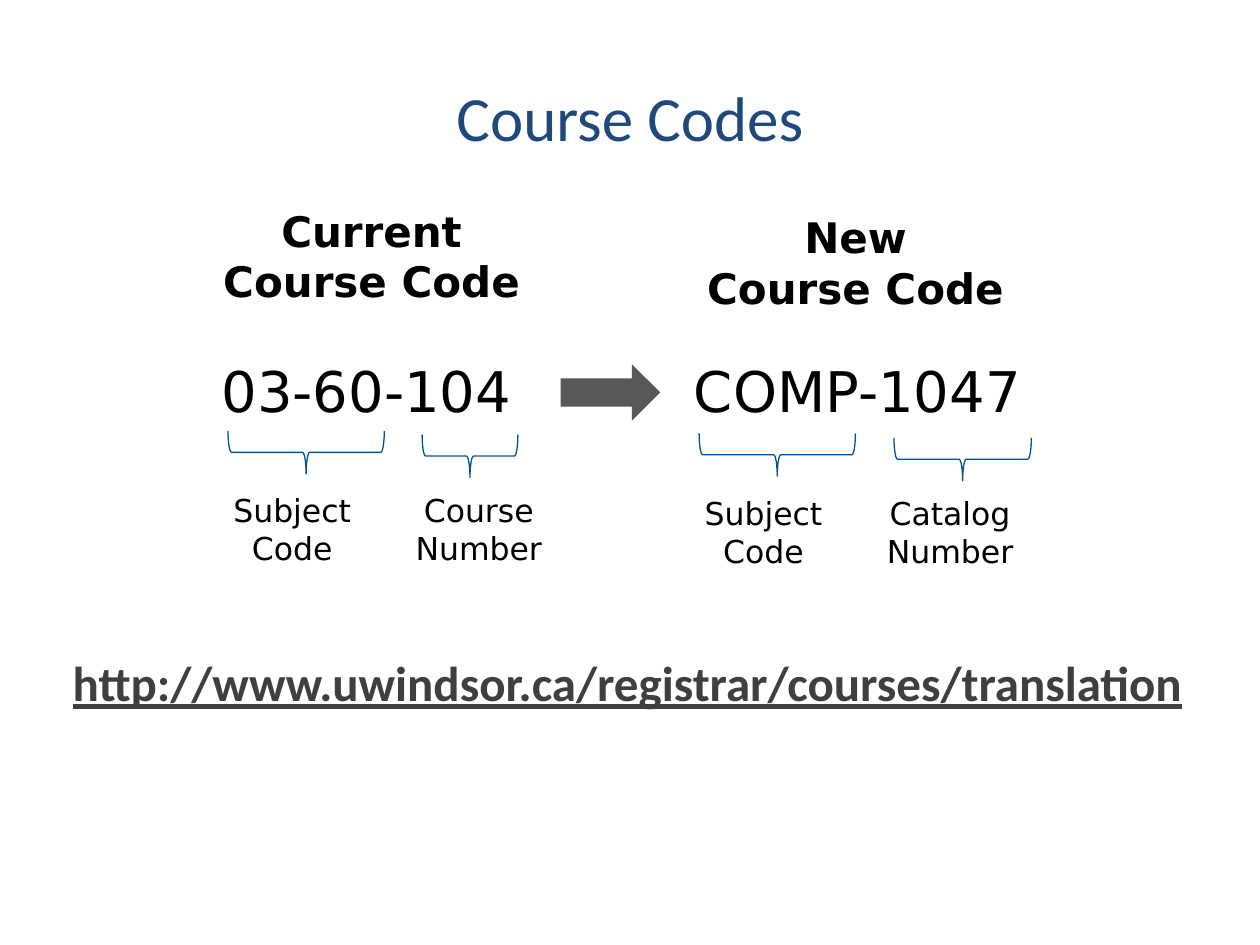
from dataclasses import dataclass

from pptx import Presentation
from pptx.dml.color import RGBColor
from pptx.enum.shapes import MSO_SHAPE
from pptx.enum.text import MSO_ANCHOR, PP_ALIGN
from pptx.util import Pt

BRACE_DEPTH = 24.5
HEADING_SIZE = (184.3, 65.5)
LABEL_SIZE = (93.6, 51.1)


@dataclass
class Label:
    text: str
    left: float
    top: float
    width: float
    height: float
    size: float
    font: str = "DejaVu Sans"
    color: str = "000000"
    align: PP_ALIGN = PP_ALIGN.CENTER
    anchor: MSO_ANCHOR = MSO_ANCHOR.TOP
    bold: bool = False
    underline: bool = False
    wrap: bool = True
    margin_left: float = 7.2


@dataclass
class Brace:
    center_x: float
    center_y: float
    span: float


def rgb(value: str) -> RGBColor:
    return RGBColor.from_string(value)


def draw_label(slide, label: Label) -> None:
    s = slide.shapes.add_textbox(
        Pt(label.left), Pt(label.top), Pt(label.width), Pt(label.height))
    tf = s.text_frame
    tf.word_wrap = label.wrap
    tf.vertical_anchor = label.anchor
    tf.margin_left = Pt(label.margin_left)
    tf.text = label.text
    for p in tf.paragraphs:
        p.alignment = label.align
        for r in p.runs:
            r.font.name = label.font
            r.font.size = Pt(label.size)
            r.font.bold = label.bold
            r.font.underline = label.underline
            r.font.color.rgb = rgb(label.color)


def draw_brace(slide, brace: Brace) -> None:
    s = slide.shapes.add_shape(
        MSO_SHAPE.LEFT_BRACE,
        Pt(brace.center_x - BRACE_DEPTH / 2), Pt(brace.center_y - brace.span / 2),
        Pt(BRACE_DEPTH), Pt(brace.span))
    s.rotation = 270
    s.shadow.inherit = False
    s.fill.background()
    s.line.color.rgb = rgb("005393")
    s.line.width = Pt(0.75)


def draw_arrow(slide, left: float, top: float, width: float, height: float) -> None:
    s = slide.shapes.add_shape(
        MSO_SHAPE.RIGHT_ARROW, Pt(left), Pt(top), Pt(width), Pt(height))
    s.shadow.inherit = False
    s.fill.solid()
    s.fill.fore_color.rgb = rgb("58585B")
    s.line.fill.background()


LABELS = [
    Label("Course Codes", 36, 21.6, 648, 90, 36, font="Calibri",
          color="1F497D", anchor=MSO_ANCHOR.MIDDLE),
    Label("http://www.uwindsor.ca/registrar/courses/translation",
          28.1, 369.4, 671.8, 41, 28, font="Calibri", color="3F3F3F",
          align=PP_ALIGN.LEFT, bold=True, underline=True, margin_left=13.5),
    Label("Current\nCourse Code", 120.2, 113.8, *HEADING_SIZE, 24,
          bold=True, wrap=False),
    Label("New\nCourse Code", 396.7, 117.4, *HEADING_SIZE, 24,
          bold=True, wrap=False),
    Label("03-60-104", 119.5, 200.2, 187.9, 46.1, 32, align=PP_ALIGN.LEFT),
    Label("COMP-1047", 389.5, 200.2, 205.9, 46.1, 32, align=PP_ALIGN.LEFT),
    Label("Subject Code", 120.2, 277.2, *LABEL_SIZE, 18),
    Label("Course Number", 226.8, 277.2, *LABEL_SIZE, 18),
    Label("Subject Code", 389.5, 278.6, *LABEL_SIZE, 18),
    Label("Catalog Number", 496.1, 278.6, *LABEL_SIZE, 18),
]

BRACES = [
    Brace(175, 258.5, 89.3),
    Brace(268.6, 260.6, 54.7),
    Brace(444.2, 259.9, 89.3),
    Brace(550.1, 262.4, 78.5),
]


def main() -> None:
    prs = Presentation()
    prs.slide_width, prs.slide_height = Pt(720), Pt(540)
    slide = prs.slides.add_slide(prs.slide_layouts[6])
    for brace in BRACES:
        draw_brace(slide, brace)
    draw_arrow(slide, 320.4, 208.1, 56.9, 32.4)
    for label in LABELS:
        draw_label(slide, label)
    prs.save("out.pptx")


if __name__ == "__main__":
    main()
